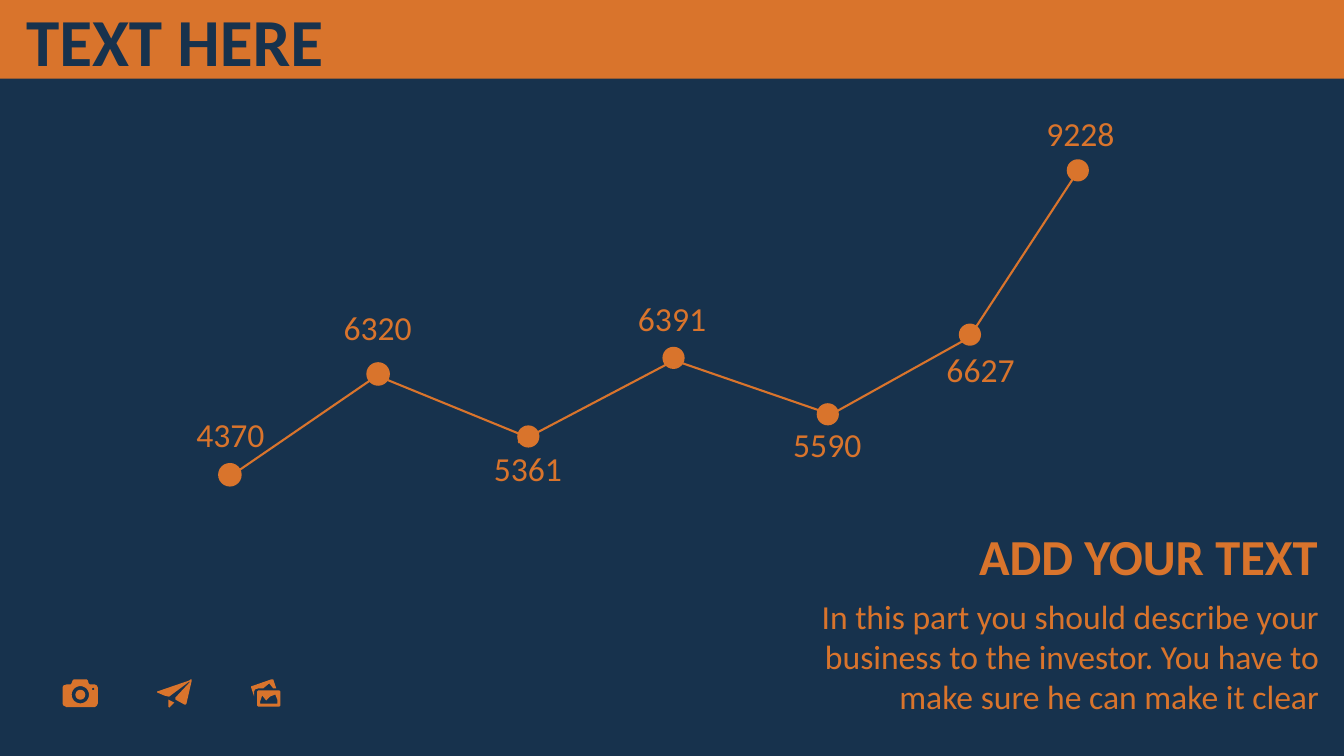
"""Build a dark slide with a hand-drawn line graph, a caption and three icons."""
import math

from lxml import etree
from pptx import Presentation
from pptx import util as u
from pptx.dml.color import RGBColor
from pptx.enum import shapes, text
from pptx.oxml.ns import qn

COLORS = {"navy": "17324D", "orange": "D9742C"}
RGB = {name: RGBColor.from_string(value) for name, value in COLORS.items()}
ALIGN = text.PP_ALIGN


def add_text(slide, box, content, size, align=ALIGN.LEFT, color="orange", bold=False):
    shape = slide.shapes.add_textbox(*map(u.Inches, box))
    frame = shape.text_frame
    frame.word_wrap = True
    frame.auto_size = text.MSO_AUTO_SIZE.SHAPE_TO_FIT_TEXT
    paragraph = frame.paragraphs[0]
    paragraph.alignment = align
    run = paragraph.add_run()
    run.text = content
    font_format = {"name": "Calibri", "size": u.Pt(size), "bold": bold}
    for attribute, value in font_format.items():
        setattr(run.font, attribute, value)
    run.font.color.rgb = RGB[color]


def circle(center_x, center_y, radius):
    angles = [math.tau * step / 24 for step in range(24)]
    return [(center_x + radius * math.cos(a), center_y + radius * math.sin(a)) for a in angles]


presentation = Presentation()
presentation.slide_width = u.Inches(13.33)
presentation.slide_height = u.Inches(7.5)
slide = presentation.slides.add_slide(presentation.slide_layouts[6])
slide.background.fill.solid()
slide.background.fill.fore_color.rgb = RGB["navy"]

filled_shapes = []
banner = slide.shapes.add_shape(shapes.MSO_SHAPE.RECTANGLE, 0, 0, u.Inches(13.33), u.Inches(0.78))
filled_shapes.append(banner)
add_text(slide, (0.16, -0.06, 4.35, 0.91), "TEXT HERE", 48, color="navy", bold=True)

DOT_SIZE = 0.22
graph_points = [
    ("4370", (2.17, 4.6), (1.79, 4.06)),
    ("6320", (3.64, 3.6), (3.25, 3)),
    ("5361", (5.13, 4.22), (4.74, 4.39)),
    ("6391", (6.57, 3.44), (6.17, 2.91)),
    ("5590", (8.1, 4), (7.71, 4.16)),
    ("6627", (9.51, 3.21), (9.23, 3.41)),
    ("9228", (10.58, 1.58), (10.22, 1.07)),
]
dots = []
for _, corner, _ in graph_points:
    box = (*corner, DOT_SIZE, DOT_SIZE)
    dots.append(slide.shapes.add_shape(shapes.MSO_SHAPE.OVAL, *map(u.Inches, box)))
filled_shapes += dots

graph_segments = [
    (2.35, 4.68, 3.75, 3.72),
    (5.24, 4.34, 3.82, 3.76),
    (6.66, 3.59, 5.14, 4.39),
    (8.15, 4.08, 6.7, 3.58),
    (9.61, 3.35, 8.21, 4.13),
    (10.69, 1.7, 9.61, 3.35),
]
for ends in graph_segments:
    line = slide.shapes.add_connector(shapes.MSO_CONNECTOR.STRAIGHT, *map(u.Inches, ends))
    line.line.color.rgb = RGB["orange"]
    line.line.width = u.Pt(1.5)
    etree.SubElement(line._element.spPr, qn("a:effectLst"))

for value, _, corner in graph_points:
    add_text(slide, (*corner, 0.99, 0.5), value, 24, ALIGN.CENTER)

description = (
    "In this part you should describe your business to the investor. "
    "You have to make sure he can make it clear"
)
add_text(slide, (7.44, 5.86, 5.74, 1.31), description, 24, ALIGN.RIGHT)
add_text(slide, (8.97, 5.16, 4.2, 0.71), "ADD YOUR TEXT", 36, ALIGN.RIGHT, bold=True)

photo_icon = [
    [(273, 689), (268, 691), (264, 695), (260, 690), (258, 696), (258, 698), (275, 698), (275, 694)],
    [(256, 685), (277, 685), (278, 686), (278, 700), (277, 701), (256, 701), (255, 700), (255, 686)],
    [(270, 674), (271, 674), (274, 683), (271, 683), (267, 678), (261, 683), (256, 683),
     (253, 684), (252, 686), (252, 691), (249, 682), (249, 681), (269, 674)],
]
camera_icon = [
    circle(79.7, 689.2, 4.9),
    circle(92.4, 683.5, 1.2),
    circle(79.7, 689.2, 8.6),
    [(74, 674), (86, 674), (87, 675), (88, 678), (89, 679), (94, 679), (96, 680), (97, 682),
     (97, 698), (96, 700), (94, 701.5), (66, 701.5), (63, 700), (62, 698), (62, 682),
     (63, 680), (66, 679), (70, 679), (71, 678), (72, 675), (73, 674)],
]
plane_icon = [
    [(167, 694), (173, 697), (168, 702), (167, 701)],
    [(189, 674), (190, 674), (190, 676), (185, 698), (184, 699), (183, 699), (174, 694),
     (174, 692), (188, 677), (188, 676), (168, 691), (167, 691), (163, 690), (156, 687),
     (156, 686), (188, 675)],
]
for contours in (photo_icon, camera_icon, plane_icon):
    outlines = [[(x * 10, y * 10) for x, y in contour] for contour in contours]
    builder = slide.shapes.build_freeform(*outlines[0][0], scale=u.Inches(1) / 1000)
    builder.add_line_segments(outlines[0][1:], close=True)
    for outline in outlines[1:]:
        builder.move_to(*outline[0])
        builder.add_line_segments(outline[1:], close=True)
    filled_shapes.append(builder.convert_to_shape())

for shape in filled_shapes:
    shape.shadow.inherit = False
    shape.fill.solid()
    shape.fill.fore_color.rgb = RGB["orange"]
    shape.line.fill.background()
for dot in dots[:2]:
    dot.line.color.rgb = RGB["orange"]
    dot.line.width = u.Pt(1)

presentation.save("out.pptx")
